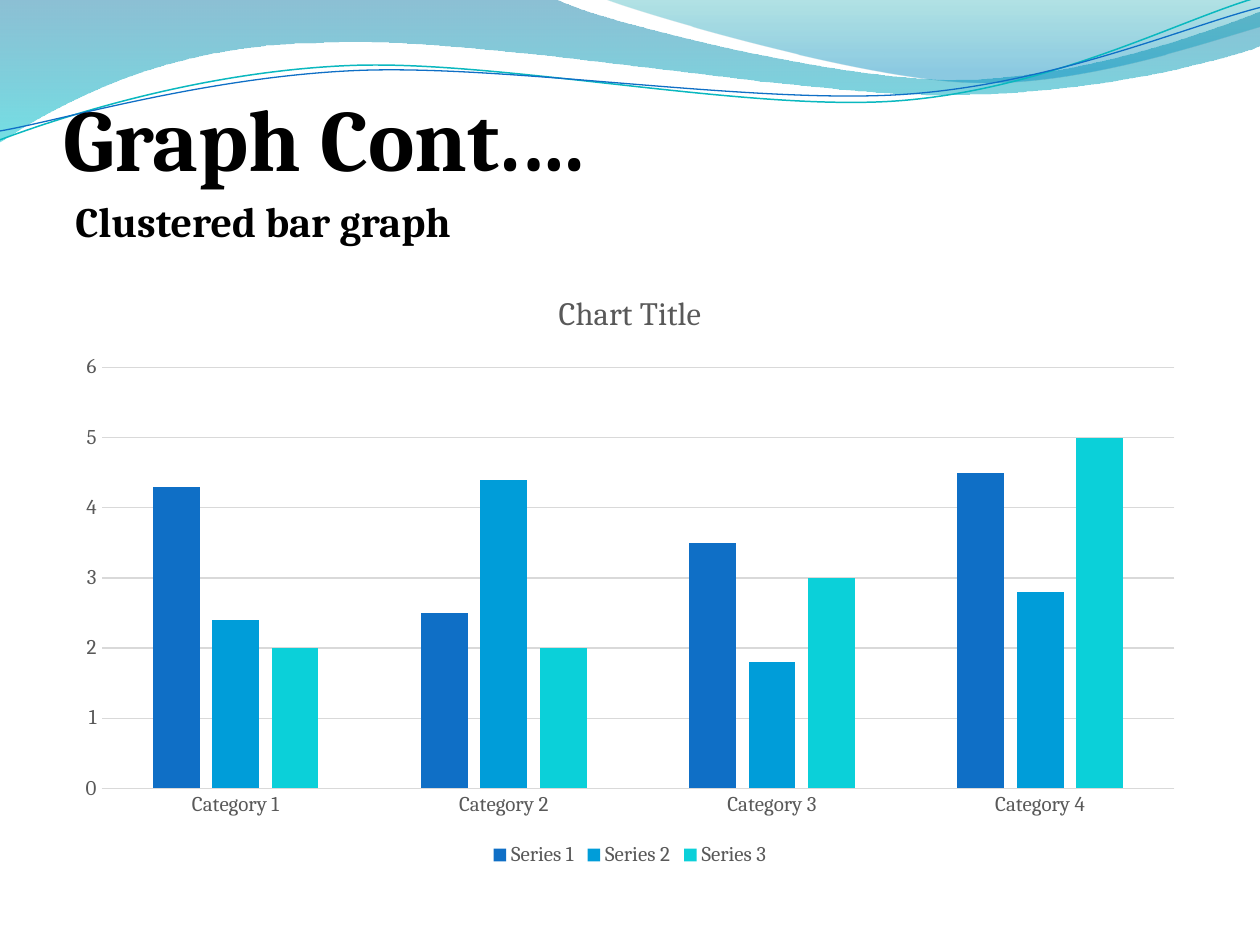
import math
from lxml import etree
from pptx import Presentation
from pptx import util as u
from pptx.chart import data
from pptx.dml.color import RGBColor
from pptx.enum import chart as ch, text
from pptx.oxml import ns

FONT = "Cambria"
TILT = 2.7
BLACK = RGBColor(0, 0, 0)
GRAY = RGBColor(0x59, 0x59, 0x59)
PALE = RGBColor(0xD9, 0xD9, 0xD9)
BLUE = RGBColor(0x0F, 0x6F, 0xC6)
SKY = RGBColor(0x00, 0x9D, 0xD9)
AQUA = RGBColor(0x0B, 0xD0, 0xD9)
TEAL = RGBColor(0x0A, 0xB8, 0xBF)
DEEP = RGBColor(0x00, 0x74, 0xA1)
CYAN = RGBColor(0x00, 0xC6, 0xCF)
SEA = RGBColor(0x00, 0xA1, 0xA9)
AZURE = RGBColor(0x00, 0x8B, 0xBF)

SWELL = [(0, -0.01), (4.4, -0.01),
         (4.76, 0.17, 6.64, 0.63, 7.58, 0.63),
         (8.53, 0.63, 9.58, 0.26, 10, 0.09), (10.01, 0.36),
         (9.83, 0.44, 8.7, 0.76, 7.46, 0.75),
         (6.22, 0.75, 3.82, 0.28, 2.57, 0.34),
         (1.29, 0.35, 0.46, 0.83, -0.01, 1.13)]
CREST = [(4.79, -0.01), (5.09, 0.11, 6.82, 0.62, 7.69, 0.65),
         (8.56, 0.69, 9.61, 0.32, 10, 0.21), (10, 0)]
UPPER = [(0, 1.11), (0.48, 0.93, 1.58, 0.57, 2.77, 0.52),
         (3.95, 0.47, 5.93, 0.89, 7.13, 0.8),
         (8.33, 0.71, 9.38, 0.15, 9.98, -0.02)]
LOWER = [(0, 1.04), (0.47, 0.96, 1.64, 0.61, 2.83, 0.56),
         (4.03, 0.51, 5.97, 0.83, 7.17, 0.75),
         (8.36, 0.67, 9.41, 0.21, 10, 0.06)]


def curve(slide, path, close):
    dots = [(u.Inches(x), u.Inches(y))
            for part in path for x, y in zip(part[::2], part[1::2])]
    pen = slide.shapes.build_freeform(*dots[0])
    pen.add_line_segments(dots[1:], close=close)
    shape = pen.convert_to_shape()
    shape.shadow.inherit = False
    lines = iter(list(shape.element.iter(ns.qn("a:lnTo"))))
    for part in path[1:]:
        group = [next(lines) for _ in part[::2]]
        if len(group) == 3:
            bend = etree.Element(ns.qn("a:cubicBezTo"))
            group[0].addprevious(bend)
            for line in group:
                bend.append(line[0])
                line.getparent().remove(line)
    return shape


def wave(slide, path, stops):
    shape = curve(slide, path, True)
    shape.line.fill.background()
    shape.fill.gradient()
    shape.fill.gradient_angle = 270
    for stop, (place, color, alpha) in zip(shape.fill.gradient_stops, stops):
        stop.position = place
        stop.color.rgb = color
    tones = shape.element.spPr.iter(ns.qn("a:srgbClr"))
    for tone, (place, color, alpha) in zip(tones, stops):
        etree.SubElement(tone, ns.qn("a:alpha"), val=str(alpha * 1000))


def turn(path, mid):
    cos, sin = math.cos(math.radians(TILT)), math.sin(math.radians(TILT))
    flat = []
    for part in path:
        spots = []
        for x, y in zip(part[::2], part[1::2]):
            x, y = x - mid[0], y - mid[1]
            spots += [mid[0] + x * cos - y * sin, mid[1] + x * sin + y * cos]
        flat.append(tuple(spots))
    return flat


def strand(slide, path, mid, color, width):
    shape = curve(slide, turn(path, mid), False)
    shape.rotation = -TILT
    shape.fill.background()
    shape.line.color.rgb = color
    shape.line.width = u.Pt(width)


def style(font, size, color, bold=False):
    font.name = FONT
    font.size = u.Pt(size)
    font.bold = bold
    font.color.rgb = color


def write(frame, words, size, color=BLACK, bold=False, align=None):
    para = frame.paragraphs[0]
    para.alignment = align
    run = para.add_run()
    run.text = words
    style(run.font, size, color, bold)


def head(slide, words):
    box = slide.shapes.title
    box.left, box.top = u.Inches(0.5), u.Inches(0.77)
    box.width, box.height = u.Inches(9), u.Inches(0.73)
    frame = box.text_frame
    frame.auto_size = text.MSO_AUTO_SIZE.NONE
    frame.vertical_anchor = text.MSO_ANCHOR.BOTTOM
    frame.margin_left = frame.margin_right = frame.margin_bottom = 0
    frame.margin_top = u.Inches(0.05)
    write(frame, words, 50, bold=True, align=text.PP_ALIGN.LEFT)
    box.element.getparent().append(box.element)


def label(slide, words):
    box = slide.shapes.add_textbox(
        u.Inches(0.5), u.Inches(1.5), u.Inches(3.33), u.Inches(0.5))
    box.text_frame.word_wrap = False
    box.text_frame.auto_size = text.MSO_AUTO_SIZE.SHAPE_TO_FIT_TEXT
    write(box.text_frame, words, 24, bold=True, align=text.PP_ALIGN.LEFT)


def bars(slide):
    stats = data.CategoryChartData()
    stats.categories = [f"Category {i}" for i in range(1, 5)]
    rows = [(4.3, 2.5, 3.5, 4.5), (2.4, 4.4, 1.8, 2.8), (2, 2, 3, 5)]
    for i, row in enumerate(rows, 1):
        stats.add_series(f"Series {i}", row)
    chart = slide.shapes.add_chart(
        ch.XL_CHART_TYPE.COLUMN_CLUSTERED, u.Inches(0.5), u.Inches(2.12),
        u.Inches(9), u.Inches(4.8), stats).chart
    style(chart.font, 10, BLACK)
    write(chart.chart_title.text_frame, "Chart Title", 18.6, GRAY)
    chart.chart_title.include_in_layout = False
    chart.has_legend = True
    chart.legend.position = ch.XL_LEGEND_POSITION.BOTTOM
    chart.legend.include_in_layout = False
    style(chart.legend.font, 12, GRAY)
    plot = chart.plots[0]
    plot.vary_by_categories = False
    plot.gap_width = 219
    plot.overlap = -27
    for item, color in zip(plot.series, (BLUE, SKY, AQUA)):
        item.format.fill.solid()
        item.format.fill.fore_color.rgb = color
    cats, vals = chart.category_axis, chart.value_axis
    for axis in (cats, vals):
        axis.major_tick_mark = ch.XL_TICK_MARK.NONE
        axis.minor_tick_mark = ch.XL_TICK_MARK.NONE
        style(axis.tick_labels.font, 12, GRAY)
    vals.format.line.fill.background()
    for line in (cats.format.line, vals.major_gridlines.format.line):
        line.color.rgb = PALE
        line.width = u.Pt(0.75)


def main():
    deck = Presentation()
    deck.slide_width, deck.slide_height = u.Inches(10), u.Inches(7.5)
    slide = deck.slides.add_slide(deck.slide_layouts[5])
    wave(slide, SWELL, [(0, DEEP, 45), (1, CYAN, 55)])
    wave(slide, CREST, [(0, SEA, 30), (0.8, AZURE, 45)])
    strand(slide, UPPER, (4.99, 0.57), TEAL, 0.85)
    strand(slide, LOWER, (5, 0.59), BLUE, 0.75)
    head(slide, "Graph Cont.…")
    bars(slide)
    label(slide, "Clustered bar graph")
    deck.save("out.pptx")


if __name__ == "__main__":
    main()
